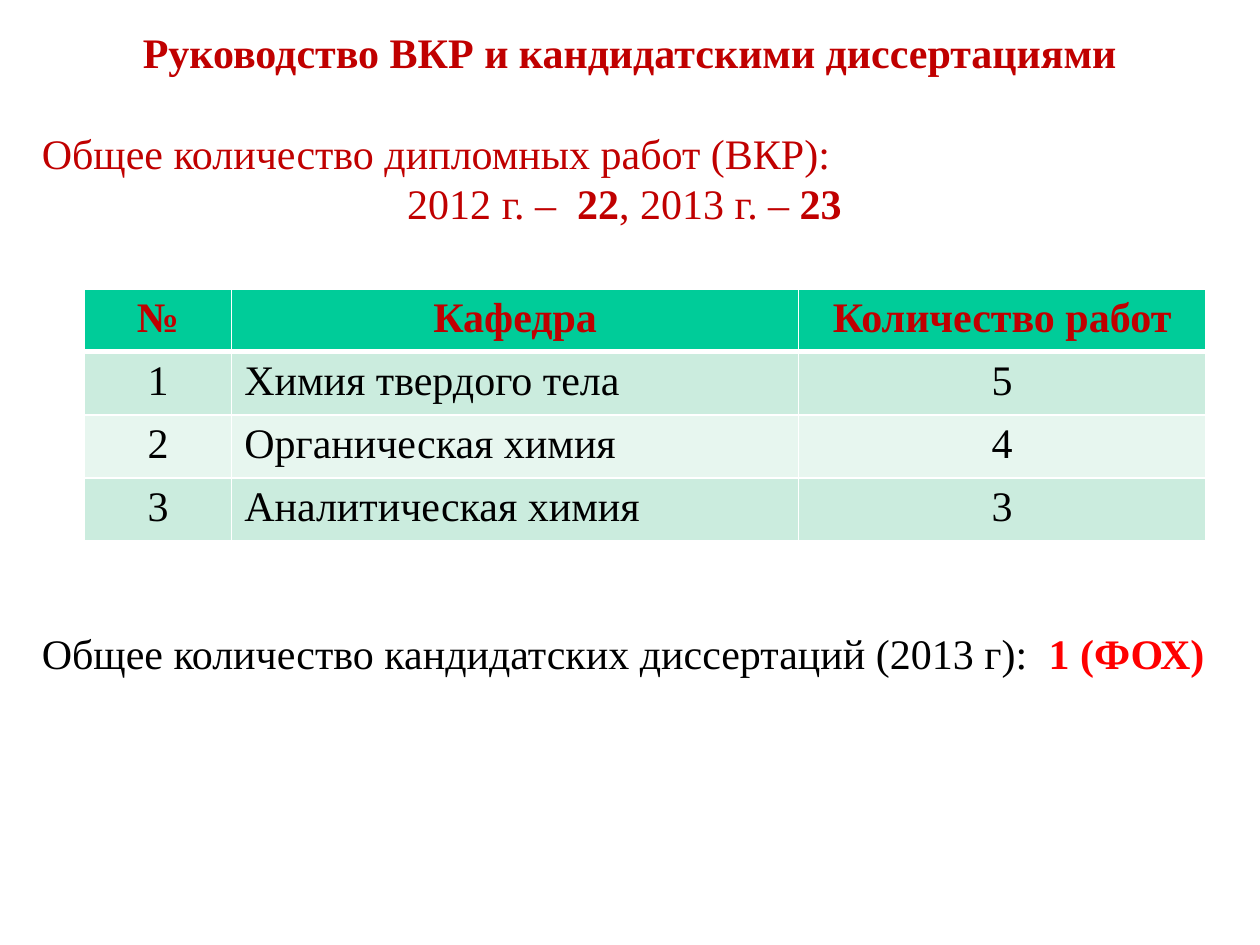
from lxml.etree import SubElement
from pptx import Presentation
from pptx.dml.color import RGBColor
from pptx.enum.text import MSO_AUTO_SIZE, PP_ALIGN
from pptx.oxml.ns import qn
from pptx.util import Pt

DARK_RED = RGBColor(0xC0, 0x00, 0x00)
RED = RGBColor(0xFF, 0x00, 0x00)
BLACK = RGBColor(0x00, 0x00, 0x00)
WHITE = RGBColor(0xFF, 0xFF, 0xFF)
GREEN = RGBColor(0x00, 0xCC, 0x99)
BANDS = (RGBColor(0xCB, 0xEC, 0xDE), RGBColor(0xE7, 0xF6, 0xEF))
LINE_HEIGHT = 28.8


class SlideBuilder:
    font_format = {"name": "Times New Roman", "size": Pt(24)}

    def __init__(self, slide):
        self.slide = slide

    def fill_paragraph(self, para, spans, color, align):
        """Fill a paragraph with spans of (text, format values)."""
        para.alignment = align
        for text, extra in spans:
            span = para.add_run()
            span.text = text
            values = {**self.font_format, "bold": False, "color": color, **extra}
            span.font.color.rgb = values.pop("color")
            for name, value in values.items():
                setattr(span.font, name, value)

    def text(self, left, top, width, height, paragraphs, color):
        """Add a box of paragraphs given as (alignment, space before, spans)."""
        box = self.slide.shapes.add_textbox(Pt(left), Pt(top), Pt(width), Pt(height))
        frame = box.text_frame
        frame.word_wrap = True
        frame.auto_size = MSO_AUTO_SIZE.SHAPE_TO_FIT_TEXT
        for index, (align, space, spans) in enumerate(paragraphs):
            para = frame.add_paragraph() if index else frame.paragraphs[0]
            para.line_spacing = Pt(LINE_HEIGHT)
            para.space_before = Pt(space)
            self.fill_paragraph(para, spans, color, align)

    def borders(self, cell, widths):
        properties = cell._tc.get_or_add_tcPr()
        for index, (side, width) in enumerate(widths.items()):
            line = properties.makeelement(qn(f"a:ln{side}"), {"w": str(Pt(width))})
            fill = SubElement(line, qn("a:solidFill"))
            SubElement(fill, qn("a:srgbClr"), val=str(WHITE))
            properties.insert(index, line)

    def table(self, left, top, widths, row_height, rows):
        """Add a table with a green header and banded rows."""
        frame = self.slide.shapes.add_table(
            len(rows), len(widths), Pt(left), Pt(top),
            Pt(sum(widths)), Pt(row_height * len(rows)))
        table = frame.table
        for column, width in zip(table.columns, widths):
            column.width = Pt(width)
        for row_index, values in enumerate(rows):
            table.rows[row_index].height = Pt(row_height)
            header = row_index == 0
            for column_index, value in enumerate(values):
                cell = table.cell(row_index, column_index)
                cell.fill.solid()
                cell.fill.fore_color.rgb = GREEN if header else BANDS[(row_index - 1) % 2]
                left_aligned = column_index == 1 and not header
                self.fill_paragraph(cell.text_frame.paragraphs[0],
                                    [(value, {"bold": header})],
                                    DARK_RED if header else BLACK,
                                    PP_ALIGN.LEFT if left_aligned else PP_ALIGN.CENTER)
                self.borders(cell, {"L": 1, "R": 1, "T": 3 if row_index == 1 else 1,
                                    "B": 3 if header else 1})


def main():
    deck = Presentation()
    deck.slide_width, deck.slide_height = Pt(720), Pt(540)
    builder = SlideBuilder(deck.slides.add_slide(deck.slide_layouts[6]))
    bold = {"bold": True}

    builder.text(16.8, 11.5, 686, 152.6, [
        (PP_ALIGN.CENTER, 0, [("Руководство ВКР и кандидатскими диссертациями", bold)]),
        (PP_ALIGN.JUSTIFY, LINE_HEIGHT, [("Общее количество дипломных работ (ВКР): ", {})]),
        (PP_ALIGN.CENTER, 0, [("2012 г. –  ", {}), ("22", bold),
                              (", 2013 г. – ", {}), ("23 ", bold)]),
    ], DARK_RED)
    builder.table(48.2, 165, (84.2, 324, 232.6), 36, [
        ("№", "Кафедра", "Количество работ"),
        ("1", "Химия твердого тела", "5"),
        ("2", "Органическая химия", "4"),
        ("3", "Аналитическая химия", "3"),
    ])
    builder.text(16.8, 355, 689, 36, [
        (PP_ALIGN.LEFT, 0, [("Общее количество кандидатских диссертаций (2013 г):  ", {}),
                            ("1 (ФОХ)", {"color": RED, "bold": True})]),
    ], BLACK)
    deck.save("out.pptx")


if __name__ == "__main__":
    main()
